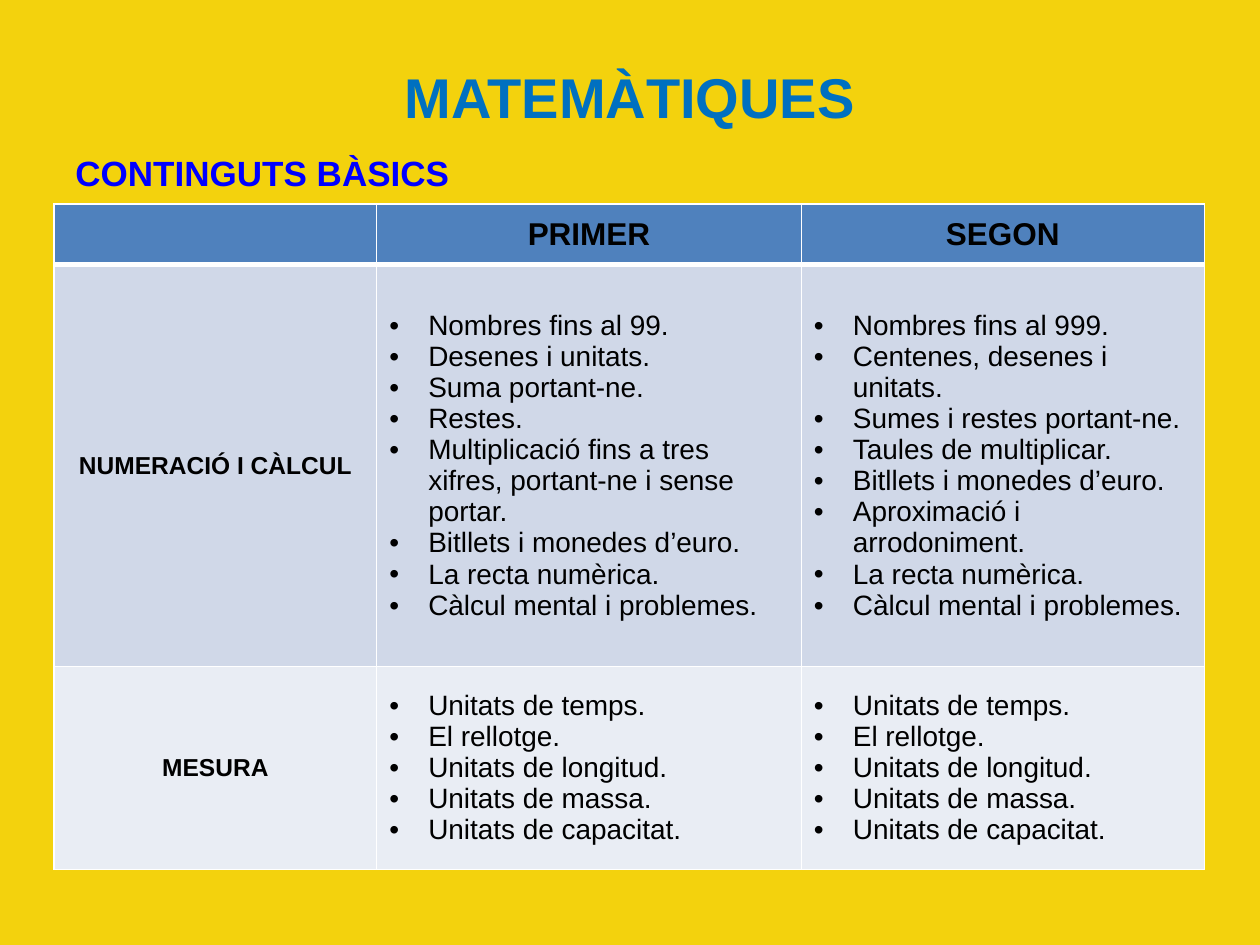
from pptx import Presentation, util as u
from pptx.dml.color import RGBColor
from pptx.enum import text as t
from pptx.oxml import parse_xml
from pptx.oxml.ns import nsdecls

HUES = {"back": "F3D20D", "title": "0070C0", "sub": "0000FF", "ink": "000000",
        "line": "FFFFFF", "head": "4F81BD", "odd": "D0D8E8", "even": "E9EDF4"}
COLS = (2.56, 3.37, 3.2)
ROWS = (0.48, 3.19, 1.61)
UNITS = ["Unitats de temps.", "El rellotge.", "Unitats de longitud.",
         "Unitats de massa.", "Unitats de capacitat."]
COMMON = ["La recta numèrica.", "Càlcul mental i problemes."]
FIRST = ["Nombres fins al 99.", "Desenes i unitats.", "Suma portant-ne.", "Restes.",
         "Multiplicació fins a tres xifres, portant-ne i sense portar.",
         "Bitllets i monedes d’euro."] + COMMON
SECOND = ["Nombres fins al 999.", "Centenes, desenes i unitats.",
          "Sumes i restes portant-ne.", "Taules de multiplicar.",
          "Bitllets i monedes d’euro.", "Aproximació i arrodoniment."] + COMMON
GRID = [["", "PRIMER", "SEGON"],
        ["NUMERACIÓ I CÀLCUL", FIRST, SECOND],
        ["MESURA", UNITS, UNITS]]


def tint(name):
    """Return the named colour."""
    return RGBColor.from_string(HUES[name])


def style(frame, size, hue, bold, align):
    """Format every paragraph and run of a text frame."""
    for para in frame.paragraphs:
        para.alignment = align
        for run in para.runs:
            font = run.font
            font.name, font.size, font.bold = "Arial", u.Pt(size), bold
            font.color.rgb = tint(hue)


def label(slide, box, words, size, hue, align, anchor):
    """Place one bold heading in the given box."""
    frame = slide.shapes.add_textbox(*map(u.Inches, box)).text_frame
    frame.word_wrap = True
    frame.vertical_anchor = anchor
    frame.text = words
    style(frame, size, hue, True, align)
    return frame


def bullet(para):
    """Give a paragraph a hanging round bullet."""
    props = para._p.get_or_add_pPr()
    props.set("marL", str(u.Inches(0.31)))
    props.set("indent", str(-u.Inches(0.31)))
    props.append(parse_xml(f'<a:buFont {nsdecls("a")} typeface="Arial"/>'))
    props.append(parse_xml(f'<a:buChar {nsdecls("a")} char="•"/>'))


def edge(cell, row):
    """Draw the cell borders, thick below the header row."""
    wide = {("B", 0), ("T", 1)}
    props = cell._tc.get_or_add_tcPr()
    for side in "LRTB":
        width = u.Pt(3 if (side, row) in wide else 1)
        props.append(parse_xml(
            f'<a:ln{side} {nsdecls("a")} w="{width}"><a:solidFill>'
            f'<a:srgbClr val="{HUES["line"]}"/></a:solidFill></a:ln{side}>'))


def fill(cell, row, words):
    """Fill one cell with a label or a bulleted list."""
    edge(cell, row)
    cell.fill.solid()
    cell.fill.fore_color.rgb = tint(("head", "odd", "even")[row])
    cell.vertical_anchor = t.MSO_ANCHOR.MIDDLE
    frame = cell.text_frame
    if isinstance(words, list):
        frame.text = "\n".join(words)
        style(frame, 16, "ink", False, t.PP_ALIGN.LEFT)
        for para in frame.paragraphs:
            bullet(para)
    else:
        frame.text = words
        style(frame, 14 if row else 18, "ink", True, t.PP_ALIGN.CENTER)


def table(slide, left, top):
    """Build the table of contents by school year."""
    box = map(u.Inches, (left, top, sum(COLS), sum(ROWS)))
    grid = slide.shapes.add_table(len(ROWS), len(COLS), *box).table
    for col, width in zip(grid.columns, COLS):
        col.width = u.Inches(width)
    for row, high in enumerate(ROWS):
        grid.rows[row].height = u.Inches(high)
        for col, words in enumerate(GRID[row]):
            fill(grid.cell(row, col), row, words)


def main():
    """Build and save the slide."""
    deck = Presentation()
    deck.slide_width, deck.slide_height = u.Inches(10), u.Inches(7.5)
    slide = deck.slides.add_slide(deck.slide_layouts[6])
    slide.background.fill.solid()
    slide.background.fill.fore_color.rgb = tint("back")
    label(slide, (0.5, 0.3, 9, 0.93), "MATEMÀTIQUES", 32, "title",
          t.PP_ALIGN.CENTER, t.MSO_ANCHOR.MIDDLE)
    sub = label(slide, (0.5, 1.15, 9, 5.83), "CONTINGUTS BÀSICS", 20, "sub",
                t.PP_ALIGN.LEFT, t.MSO_ANCHOR.TOP)
    sub.paragraphs[0].space_before = u.Pt(3)
    table(slide, 0.43, 1.62)
    deck.save("out.pptx")


if __name__ == "__main__":
    main()
